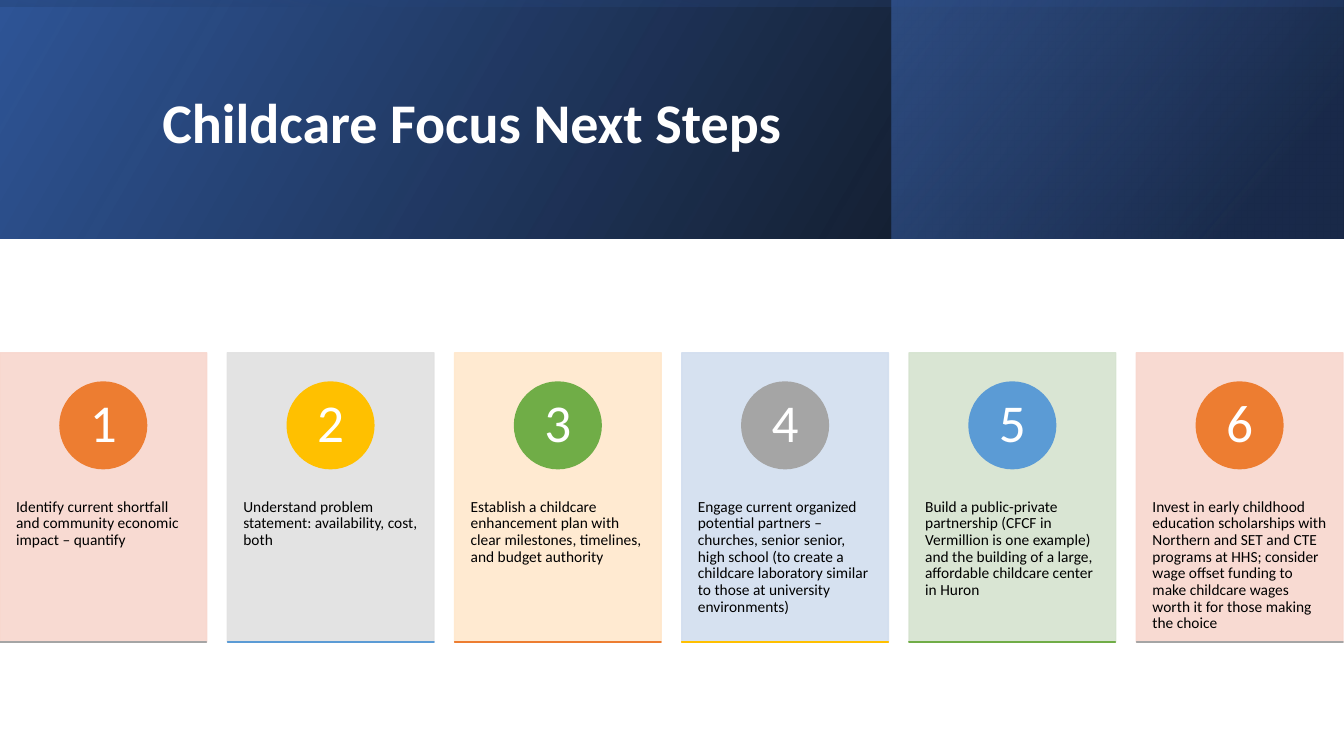
"""Build the childcare next steps slide: a gradient banner above six numbered cards."""
from dataclasses import dataclass

from lxml import etree
from pptx import Presentation
from pptx import util as u
from pptx.dml.color import RGBColor
from pptx.enum import shapes, text
from pptx.oxml import parse_xml
from pptx.oxml.ns import nsdecls, qn


@dataclass(frozen=True)
class Theme:
    font: str = "Calibri"
    title_size: int = 40
    number_size: int = 38
    body_size: int = 11
    white: str = "FFFFFF"
    black: str = "000000"
    navy: str = "203864"
    deep_blue: str = "2F5597"
    blue: str = "4472C4"
    sky: str = "5B9BD5"
    orange: str = "ED7D31"
    gold: str = "FFC000"
    green: str = "70AD47"
    grey: str = "A5A5A5"
    pale_orange: str = "F8D7CE"
    pale_grey: str = "E1E1E1"
    pale_gold: str = "FFE8CC"
    pale_blue: str = "D2DEEF"
    pale_green: str = "D5E3CF"


theme = Theme()


def add_solid(slide, kind, box, color, opacity=100):
    shape = slide.shapes.add_shape(kind, *map(u.Inches, box))
    shape.shadow.inherit = False
    shape.line.width = u.Pt(1)
    for fill in (shape.fill, shape.line.fill):
        fill.solid()
        fill.fore_color.rgb = RGBColor.from_string(color)
    if opacity < 100:
        for color_element in shape._element.spPr.iter(qn("a:srgbClr")):
            etree.SubElement(color_element, qn("a:alpha"), val=str(opacity * 1000))
    return shape


def write_text(shape, content, size, color, align, anchor, margins):
    frame = shape.text_frame
    frame.word_wrap = True
    frame.auto_size = text.MSO_AUTO_SIZE.NONE
    frame.vertical_anchor = anchor
    frame.margin_left, frame.margin_top, frame.margin_right, frame.margin_bottom = map(
        u.Inches, margins)
    frame.text = content
    paragraph = frame.paragraphs[0]
    paragraph.alignment = align
    paragraph.line_spacing = 0.9
    paragraph.font.name = theme.font
    paragraph.font.size = u.Pt(size)
    paragraph.font.color.rgb = RGBColor.from_string(color)
    return paragraph


presentation = Presentation()
presentation.slide_width = u.Inches(13.33)
presentation.slide_height = u.Inches(7.5)
slide = presentation.slides.add_slide(presentation.slide_layouts[5])

banners = [
    ((0, 0, 13.33, 2.37), 0, 330, [(0, theme.black, 96), (100, theme.deep_blue, 100)]),
    ((8.84, 0, 4.48, 2.37), 0, 320, [(19, theme.navy, 68), (100, theme.blue, 48)]),
    ((5.48, -5.48, 2.37, 13.33), 270, 350,
     [(23, theme.deep_blue, 16), (99, theme.black, 45)]),
]
for box, rotation, angle, stops in banners:
    banner = slide.shapes.add_shape(shapes.MSO_SHAPE.RECTANGLE, *map(u.Inches, box))
    banner.shadow.inherit = False
    banner.line.fill.background()
    banner.rotation = rotation
    properties = banner._element.spPr
    properties.find(qn("a:xfrm")).set("flipH", "1")
    stop_xml = "".join(
        f'<a:gs pos="{position * 1000}"><a:srgbClr val="{color}">'
        f'<a:alpha val="{opacity * 1000}"/></a:srgbClr></a:gs>'
        for position, color, opacity in stops)
    gradient = parse_xml(
        f'<a:gradFill {nsdecls("a")} rotWithShape="1"><a:gsLst>{stop_xml}</a:gsLst>'
        f'<a:lin ang="{angle * 60000}" scaled="0"/></a:gradFill>')
    properties.find(qn("a:prstGeom")).addnext(gradient)

title = slide.shapes.title
title.left, title.top, title.width, title.height = map(u.Inches, (1.51, 0.38, 10.63, 1.72))
heading = write_text(title, "Childcare Focus Next Steps", theme.title_size, theme.white,
                     text.PP_ALIGN.LEFT, text.MSO_ANCHOR.MIDDLE, (0.1, 0.05, 0.1, 0.05))
heading.font.bold = True
slide.shapes._spTree.append(title._element)

steps = [
    ("Identify current shortfall and community economic impact – quantify",
     theme.pale_orange, theme.orange, theme.grey),
    ("Understand problem statement: availability, cost, both",
     theme.pale_grey, theme.gold, theme.sky),
    ("Establish a childcare enhancement plan with clear milestones, timelines, "
     "and budget authority",
     theme.pale_gold, theme.green, theme.orange),
    ("Engage current organized potential partners – churches, senior senior, "
     "high school (to create a childcare laboratory similar to those at "
     "university environments)",
     theme.pale_blue, theme.grey, theme.gold),
    ("Build a public-private partnership (CFCF in Vermillion is one example) "
     "and the building of a large, affordable childcare center in Huron",
     theme.pale_green, theme.sky, theme.green),
    ("Invest in early childhood education scholarships with Northern and SET "
     "and CTE programs at HHS; consider wage offset funding to make childcare "
     "wages worth it for those making the choice",
     theme.pale_orange, theme.orange, theme.grey),
]
card_width, card_top, card_height = 2.05, 3.5, 2.87
circle_size = 0.86
card_pitch = 11.27 / (len(steps) - 1)

for index, (description, card_color, circle_color, base_color) in enumerate(steps):
    left = index * card_pitch
    card = add_solid(slide, shapes.MSO_SHAPE.RECTANGLE,
                     (left, card_top, card_width, card_height), card_color, 90)
    write_text(card, description, theme.body_size, theme.black,
               text.PP_ALIGN.LEFT, text.MSO_ANCHOR.TOP, (0.16, 1.45, 0.16, 0.06))
    circle_left = left + (card_width - circle_size) / 2
    circle = add_solid(slide, shapes.MSO_SHAPE.OVAL,
                       (circle_left, card_top + 0.29, circle_size, circle_size), circle_color)
    write_text(circle, str(index + 1), theme.number_size, theme.white,
               text.PP_ALIGN.CENTER, text.MSO_ANCHOR.MIDDLE, (0.07, 0.01, 0.07, 0.01))
    add_solid(slide, shapes.MSO_SHAPE.RECTANGLE,
              (left, card_top + card_height, card_width, 0), base_color)

presentation.save("out.pptx")
